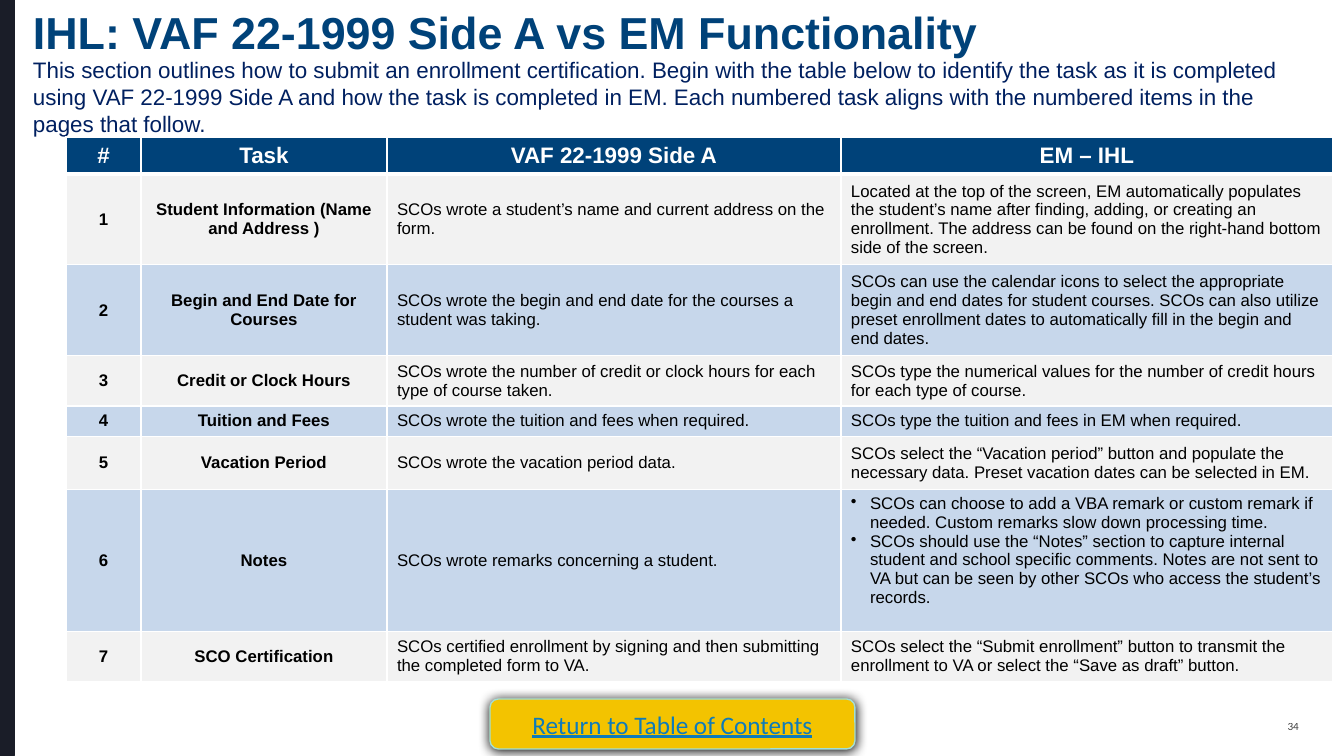
"""Build the slide comparing VAF 22-1999 Side A tasks with EM functionality."""
import lxml.etree
import pptx
import pptx.dml.color
import pptx.enum.shapes
import pptx.enum.text
import pptx.oxml
import pptx.oxml.ns
import pptx.util

SCALE = 12192000 / 1344
COLORS = {
    "white": "FFFFFF", "black": "000000", "navy": "004279", "intro": "002060",
    "gray": "F2F2F2", "blue": "C7D7EB", "gold": "F3C300", "mint": "A3DFD6",
    "link": "0E7BBA", "bar": "1A1D28",
}
RGB = {name: pptx.dml.color.RGBColor.from_string(value) for name, value in COLORS.items()}
ALIGN = pptx.enum.text.PP_ALIGN
ANCHOR = pptx.enum.text.MSO_ANCHOR
SHAPES = pptx.enum.shapes.MSO_SHAPE
NAMESPACE = pptx.oxml.ns.nsdecls("a")


def px(*lengths):
    return [pptx.util.Emu(round(length * SCALE)) for length in lengths]


def write(paragraph, text, size, color, bold=False, align=ALIGN.LEFT, font="Arial"):
    paragraph.text = text
    paragraph.alignment = align
    paragraph.font.name = font
    paragraph.font.size = pptx.util.Pt(size)
    paragraph.font.bold = bold
    paragraph.font.color.rgb = RGB[color]


presentation = pptx.Presentation()
presentation.slide_width, presentation.slide_height = px(1344, 756)
slide = presentation.slides.add_slide(presentation.slide_layouts[6])

texts = [
    ((1257, 715, 42, 23), "34", 8, "black", False, ALIGN.RIGHT, "Calibri"),
    ((33, 15, 985, 38), "IHL: VAF 22-1999 Side A vs EM Functionality",
     32, "navy", True, ALIGN.LEFT, "Arial"),
    ((33, 56, 1267, 80),
     "This section outlines how to submit an enrollment certification. Begin with the table below "
     "to identify the task as it is completed using VAF 22-1999 Side A and how the task is "
     "completed in EM. Each numbered task aligns with the numbered items in the pages that follow.",
     16, "intro", False, ALIGN.LEFT, "Arial"),
]
frames = []
for box, *style in texts:
    frame = slide.shapes.add_textbox(*px(*box)).text_frame
    frame.word_wrap = True
    frame.margin_left = frame.margin_top = frame.margin_right = frame.margin_bottom = 0
    write(frame.paragraphs[0], *style)
    frames.append(frame)
number_frame, title_frame, intro_frame = frames
number_frame.vertical_anchor = ANCHOR.MIDDLE
title_frame.paragraphs[0].line_spacing = 0.8
number_color = number_frame.paragraphs[0].font.fill._xPr.find(".//" + pptx.oxml.ns.qn("a:srgbClr"))
number_color.append(pptx.oxml.parse_xml(f'<a:alpha {NAMESPACE} val="75000"/>'))

rows = [
    ("#", "Task", "VAF 22-1999 Side A", ["EM – IHL"]),
    ("1", "Student Information (Name and Address )",
     "SCOs wrote a student’s name and current address on the form.",
     ["Located at the top of the screen, EM automatically populates the student’s name after "
      "finding, adding, or creating an enrollment. The address can be found on the right-hand "
      "bottom side of the screen."]),
    ("2", "Begin and End Date for Courses",
     "SCOs wrote the begin and end date for the courses a student was taking.",
     ["SCOs can use the calendar icons to select the appropriate begin and end dates for student "
      "courses. SCOs can also utilize preset enrollment dates to automatically fill in the begin "
      "and end dates."]),
    ("3", "Credit or Clock Hours",
     "SCOs wrote the number of credit or clock hours for each type of course taken.",
     ["SCOs type the numerical values for the number of credit hours for each type of course."]),
    ("4", "Tuition and Fees", "SCOs wrote the tuition and fees when required.",
     ["SCOs type the tuition and fees in EM when required."]),
    ("5", "Vacation Period", "SCOs wrote the vacation period data.",
     ["SCOs select the “Vacation period” button and populate the necessary data. Preset vacation "
      "dates can be selected in EM."]),
    ("6", "Notes", "SCOs wrote remarks concerning a student.",
     ["SCOs can choose to add a VBA remark or custom remark if needed. Custom remarks slow down "
      "processing time.",
      "SCOs should use the “Notes” section to capture internal student and school specific "
      "comments. Notes are not sent to VA but can be seen by other SCOs who access the student’s "
      "records."]),
    ("7", "SCO Certification",
     "SCOs certified enrollment by signing and then submitting the completed form to VA.",
     ["SCOs select the “Submit enrollment” button to transmit the enrollment to VA or select the "
      "“Save as draft” button."]),
]
column_widths = px(75, 246, 454, 492)
row_heights = px(35, 86, 85, 48, 28, 53, 142, 48)
table = slide.shapes.add_table(
    len(rows), len(column_widths), *px(66, 137), sum(column_widths), sum(row_heights)).table
for column, width in zip(table.columns, column_widths):
    column.width = width
for row, height in zip(table.rows, row_heights):
    row.height = height

for row_index, (number, task, paper, screen) in enumerate(rows):
    header = row_index == 0
    fill = "navy" if header else ("blue", "gray")[row_index % 2]
    for column_index, entries in enumerate(([number], [task], [paper], screen)):
        cell = table.cell(row_index, column_index)
        cell.vertical_anchor = ANCHOR.MIDDLE
        heading = header or column_index < 2
        bulleted = len(entries) > 1
        for entry_index, entry in enumerate(entries):
            frame = cell.text_frame
            paragraph = frame.add_paragraph() if entry_index else frame.paragraphs[0]
            if bulleted:
                cell.vertical_anchor = ANCHOR.TOP
                properties = paragraph._p.get_or_add_pPr()
                indent = px(19)[0]
                properties.set("marL", str(indent))
                properties.set("indent", str(-indent))
                properties.append(pptx.oxml.parse_xml(f'<a:buChar {NAMESPACE} char="•"/>'))
            write(paragraph, entry, 16 if header else 12, "white" if header else "black",
                  heading, ALIGN.CENTER if heading else ALIGN.LEFT)
        cell_properties = cell._tc.get_or_add_tcPr()
        for side in ("lnL", "lnR", "lnT", "lnB"):
            thick = (header and side == "lnB") or (row_index == 1 and side == "lnT")
            cell_properties.append(pptx.oxml.parse_xml(
                f'<a:{side} {NAMESPACE} w="{pptx.util.Pt(3 if thick else 1)}"><a:solidFill>'
                f'<a:srgbClr val="{COLORS["white"]}"/></a:solidFill></a:{side}>'))
        cell.fill.solid()
        cell.fill.fore_color.rgb = RGB[fill]

panels = [
    (SHAPES.ROUNDED_RECTANGLE, (490, 699, 365, 50), "gold", "mint", 1),
    (SHAPES.RECTANGLE, (-4, 0, 18, 756), "bar", "bar", 2.25),
]
drawn = []
for kind, box, fill, line, weight in panels:
    shape = slide.shapes.add_shape(kind, *px(*box))
    shape.shadow.inherit = False
    shape.fill.solid()
    shape.fill.fore_color.rgb = RGB[fill]
    shape.line.color.rgb = RGB[line]
    shape.line.width = pptx.util.Pt(weight)
    drawn.append(shape)

button = drawn[0]
button.text_frame.vertical_anchor = ANCHOR.MIDDLE
label = button.text_frame.paragraphs[0]
write(label, "Return to Table of Contents", 18, "link", False, ALIGN.CENTER, "Calibri")
label.font.underline = True
effects = button._element.spPr.find(pptx.oxml.ns.qn("a:effectLst"))
effects.append(pptx.oxml.parse_xml(
    f'<a:outerShdw {NAMESPACE} blurRad="{pptx.util.Pt(8.5)}" dist="{pptx.util.Pt(1)}" '
    f'dir="5400000" rotWithShape="0"><a:srgbClr val="{COLORS["black"]}"/></a:outerShdw>'))

presentation.save("out.pptx")
